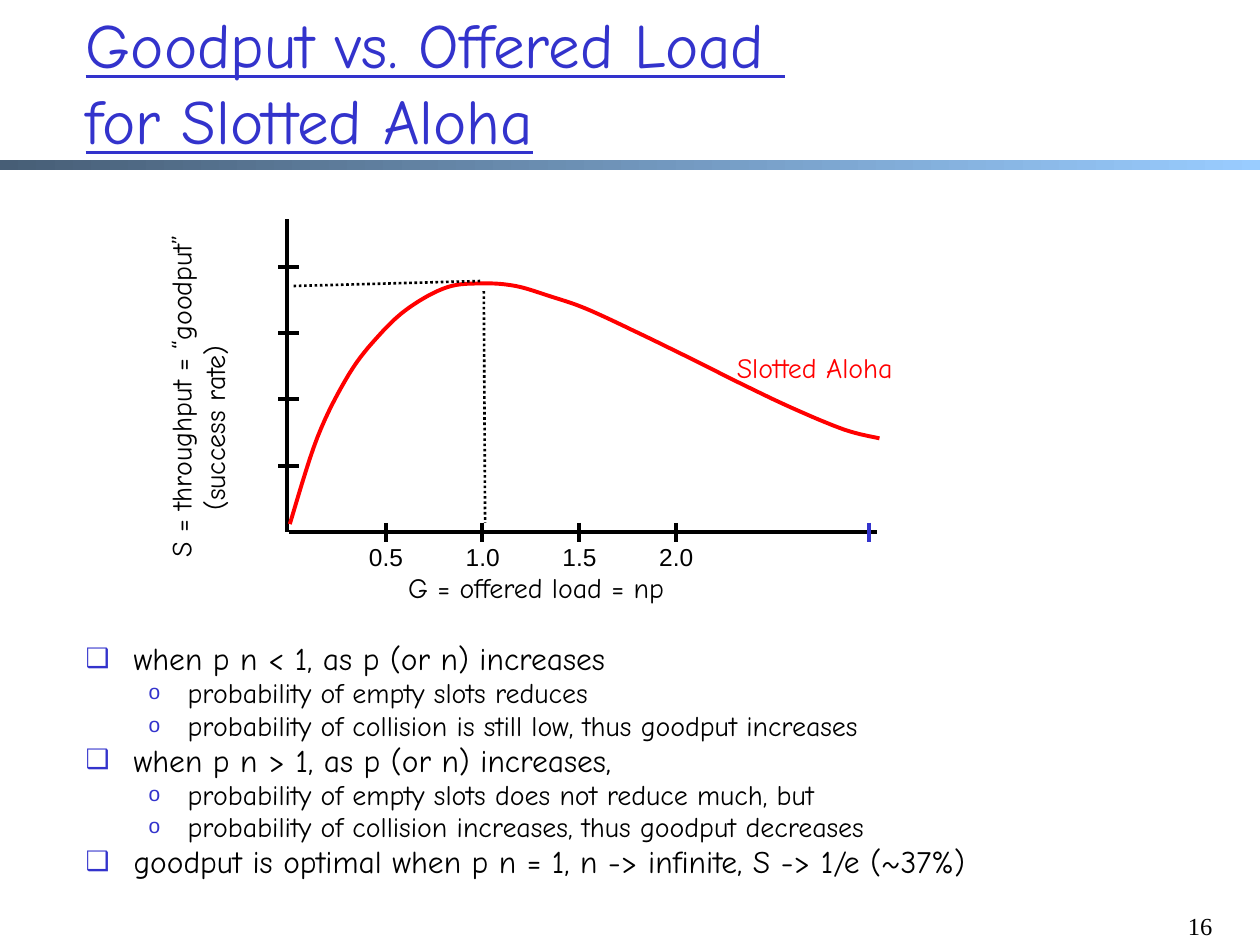
from dataclasses import dataclass
from itertools import product

from lxml.etree import SubElement
from pptx import Presentation
from pptx.dml.color import RGBColor
from pptx.enum.dml import MSO_LINE
from pptx.enum.shapes import MSO_CONNECTOR, MSO_SHAPE
from pptx.enum.text import MSO_ANCHOR, MSO_AUTO_SIZE, PP_ALIGN
from pptx.oxml.ns import qn
from pptx.util import Emu, Inches, Pt

COLS, ROWS = 100, 75
CELL = Inches(10) // COLS
BLACK, BLUE, RED = "000000", "3333CC", "FF0000"
HAND = "Comic Neue"


@dataclass
class Stroke:
    x1: float
    y1: float
    x2: float
    y2: float
    color: str = BLACK
    width: float = 2.25
    dash: bool = False


@dataclass
class Label:
    text: str
    x: float
    y: float
    w: float
    h: float
    size: float = 16
    font: str = HAND
    color: str = BLACK
    align: PP_ALIGN = PP_ALIGN.LEFT
    wrap: bool = False


@dataclass
class Level:
    mark: str
    scale: int
    left: float
    hang: float
    size: float


@dataclass
class Item:
    text: str
    level: int = 0


LEVELS = [Level("❑", 85, 0.38, 0.38, 18), Level("o", 75, 0.81, 0.31, 16)]
ITEMS = [
    Item("when p n < 1, as p (or n) increases"),
    Item("probability of empty slots reduces", 1),
    Item("probability of collision is still low, thus goodput increases", 1),
    Item("when p n > 1, as p (or n) increases,"),
    Item("probability of empty slots does not reduce much, but", 1),
    Item("probability of collision increases, thus goodput decreases", 1),
    Item("goodput is optimal when p n = 1, n -> infinite, S -> 1/e (~37%)"),
]
CURVE = [
    (23, 41.6), (25.2, 34.7), (27.7, 29.7), (30.1, 26.6), (32.5, 24.4),
    (35.5, 22.8), (38.3, 22.5), (40.9, 22.7), (43.6, 23.5), (46.5, 24.5),
    (50.6, 26.4), (54.9, 28.5), (58.9, 30.5), (62.9, 32.4), (67, 34.1),
    (69.8, 34.8),
]


def grid(n: float) -> Emu:
    return Emu(round(n * CELL))


def rgb(code: str) -> RGBColor:
    return RGBColor.from_string(code)


def place(shape, x: float, y: float, w: float, h: float) -> None:
    shape.left, shape.top = grid(x), grid(y)
    shape.width, shape.height = grid(w), grid(h)


def write(para, text: str, size: float, font: str = HAND,
          color: str = BLACK, under: bool = False) -> None:
    run = para.add_run()
    run.text = text
    run.font.size = Pt(size)
    run.font.name = font
    run.font.color.rgb = rgb(color)
    run.font.underline = under


def draw_line(slide, s: Stroke) -> None:
    line = slide.shapes.add_connector(
        MSO_CONNECTOR.STRAIGHT, *map(grid, (s.x1, s.y1, s.x2, s.y2)))
    line.line.color.rgb = rgb(s.color)
    line.line.width = Pt(s.width)
    if s.dash:
        line.line.dash_style = MSO_LINE.ROUND_DOT
    SubElement(line._element.spPr, qn("a:effectLst"))


def draw_label(slide, lab: Label):
    box = slide.shapes.add_textbox(*map(grid, (lab.x, lab.y, lab.w, lab.h)))
    box.text_frame.word_wrap = lab.wrap
    para = box.text_frame.paragraphs[0]
    para.alignment = lab.align
    write(para, lab.text, lab.size, lab.font, lab.color)
    return box


def blend(a: float, b: float, c: float, d: float, t: float) -> float:
    return (2 * b + (c - a) * t + (2 * a - 5 * b + 4 * c - d) * t ** 2
            + (3 * b - a - 3 * c + d) * t ** 3) / 2


def smooth(pts: list, steps: int = 8) -> list:
    ends = [pts[0], *pts, pts[-1]]
    quads = list(zip(ends, ends[1:], ends[2:], ends[3:]))
    return [pts[0]] + [
        tuple(blend(*axis, k / steps) for axis in zip(*quad))
        for quad, k in product(quads, range(1, steps + 1))]


def draw_curve(slide) -> None:
    first, *rest = [(grid(x), grid(y)) for x, y in smooth(CURVE)]
    pen = slide.shapes.build_freeform(*first)
    pen.add_line_segments(rest, close=False)
    curve = pen.convert_to_shape()
    curve.fill.background()
    curve.line.color.rgb = rgb(RED)
    curve.line.width = Pt(2.25)
    curve.shadow.inherit = False


def draw_band(slide) -> None:
    band = slide.shapes.add_shape(
        MSO_SHAPE.RECTANGLE, 0, grid(12.7), grid(COLS), grid(0.8))
    band.fill.gradient()
    band.fill.gradient_angle = 0
    for stop, code, pos in zip(band.fill.gradient_stops,
                               ("475E76", "99CCFF"), (0, 1)):
        stop.color.rgb = rgb(code)
        stop.position = pos
    band.line.fill.background()
    band.shadow.inherit = False


def draw_title(slide) -> None:
    title = slide.shapes.title
    place(title, 5.8, 0.2, 87.8, 12.5)
    frame = title.text_frame
    frame.auto_size = MSO_AUTO_SIZE.NONE
    frame.vertical_anchor = MSO_ANCHOR.MIDDLE
    para = frame.paragraphs[0]
    para.alignment = PP_ALIGN.LEFT
    write(para, "Goodput vs. Offered Load ", 36, color=BLUE, under=True)
    para.add_line_break()
    write(para, "for Slotted Aloha", 36, color=BLUE, under=True)


def draw_list(slide) -> None:
    body = slide.placeholders[1]
    place(body, 5.8, 50.8, 89.1, 22.5)
    frame = body.text_frame
    frame.auto_size = MSO_AUTO_SIZE.NONE
    for i, item in enumerate(ITEMS):
        kind = LEVELS[item.level]
        para = frame.add_paragraph() if i else frame.paragraphs[0]
        para.level = item.level
        para.line_spacing = 0.8
        para.space_before = Pt(kind.size * 0.2)
        props = para._p.get_or_add_pPr()
        props.set("marL", str(Inches(kind.left)))
        props.set("indent", str(-Inches(kind.hang)))
        tint = SubElement(props, qn("a:buClr"))
        SubElement(tint, qn("a:srgbClr"), val=BLUE)
        SubElement(props, qn("a:buSzPct"), val=str(kind.scale * 1000))
        SubElement(props, qn("a:buFont"), typeface="Arial")
        SubElement(props, qn("a:buChar"), char=kind.mark)
        write(para, item.text, kind.size)


def draw_plot(slide) -> None:
    side = draw_label(slide, Label("S = throughput = “goodput”",
                                   -0.6, 25.7, 32.6, 6.4, wrap=True))
    para = side.text_frame.add_paragraph()
    para._p.get_or_add_pPr().set("marL", str(Inches(0.37)))
    write(para, "(success rate)", 16)
    side.rotation = 270

    draw_line(slide, Stroke(22.9, 42.2, 69.6, 42.2))
    draw_line(slide, Stroke(22.8, 42.2, 22.8, 17.4))
    marks = ["0.5", "1.0", "1.5", "2.0", "", ""]
    for i, mark in enumerate(marks):
        x = 30.6 + 7.68 * i
        if mark:
            draw_line(slide, Stroke(x, 41.5, x, 43))
            draw_label(slide, Label(mark, x - 2.3, 42.5, 4.7, 3.3, 14, "Arial"))
    draw_line(slide, Stroke(69, 41.5, 69, 43, BLUE))
    for i in range(4):
        y = 21.2 + 5.25 * i
        draw_line(slide, Stroke(22.1, y, 23.7, y))
    draw_label(slide, Label("G = offered load = np", 31.4, 44.8, 23.9, 3.7))
    draw_label(slide, Label("Slotted Aloha", 57.5, 27.3, 16.4, 3.7, color=RED))
    draw_curve(slide)
    draw_line(slide, Stroke(38.4, 23.1, 38.5, 41.5, width=1.5, dash=True))
    draw_line(slide, Stroke(23.3, 22.7, 38.3, 22.3, width=1.5, dash=True))


def main() -> None:
    deck = Presentation()
    deck.slide_width, deck.slide_height = grid(COLS), grid(ROWS)
    slide = deck.slides.add_slide(deck.slide_layouts[1])
    draw_band(slide)
    draw_title(slide)
    draw_plot(slide)
    draw_list(slide)
    draw_label(slide, Label("16", 92.5, 71.8, 4.7, 3.2, 14, "Times New Roman",
                            align=PP_ALIGN.RIGHT, wrap=True))
    deck.save("out.pptx")


if __name__ == "__main__":
    main()
